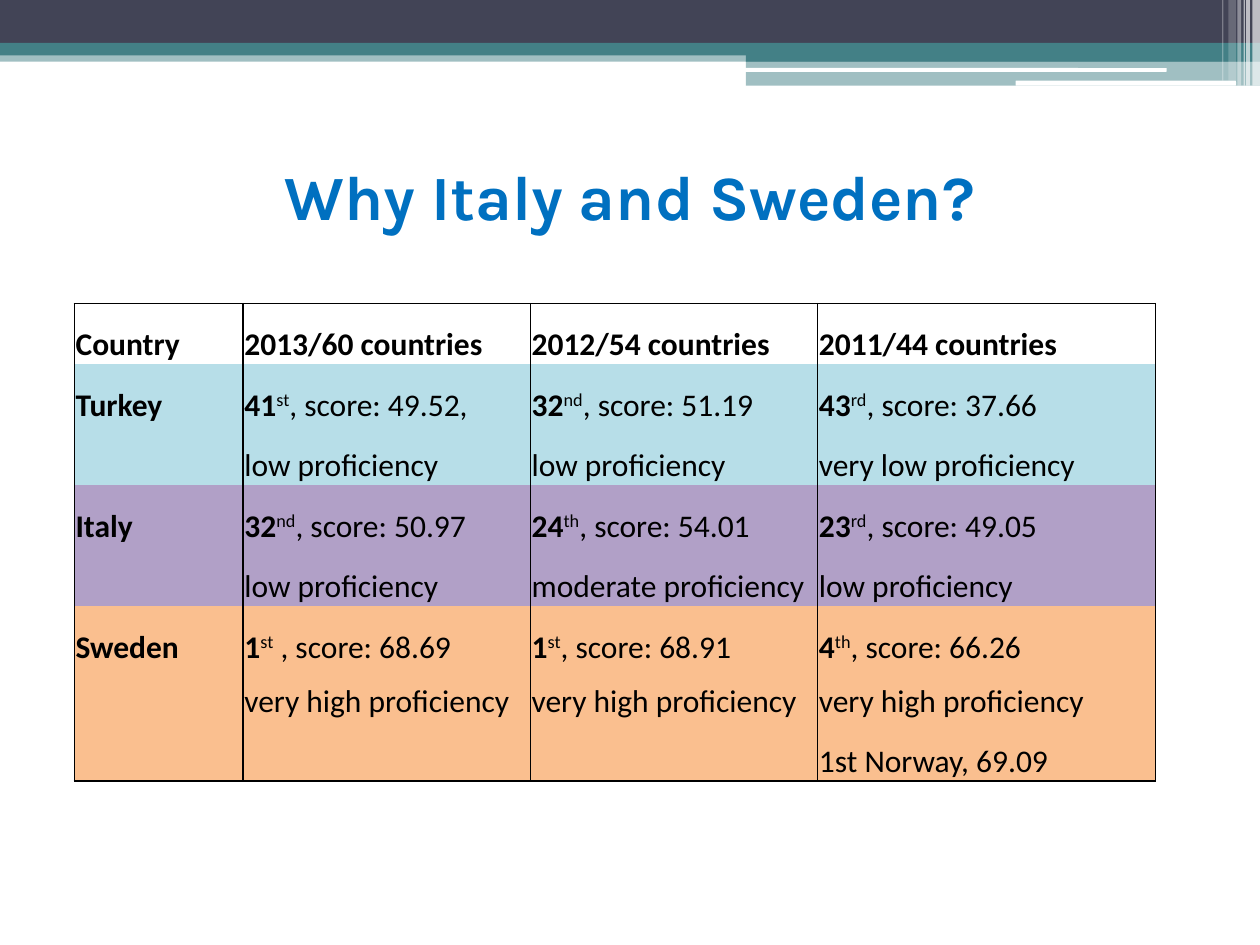
from dataclasses import dataclass
from typing import Optional

from lxml import etree
from pptx import Presentation
from pptx import util as u
from pptx.dml.color import RGBColor
from pptx.enum import shapes, text
from pptx.oxml import ns

COLORS = {
    "navy": "424456", "teal": "438086", "white": "FFFFFF", "black": "000000",
    "title": "0070C0", "turkey": "B7DEE8", "italy": "B1A0C7", "sweden": "FABF8F",
}
COLUMNS, ROWS = 100, 75  # slide grid of 0.1 inch cells
CELL = u.Inches(0.1)
TABLE_COLUMNS = (13.4, 22.8, 22.8, 26.8)
TABLE_ROWS = (4.8,) * 6 + (4.3, 4.8)
PLAIN_TABLE = "{2D5ABB26-0587-4C30-8999-92F81FD0307C}"


@dataclass
class Band:
    left: float
    top: float
    width: float
    height: float
    color: str
    opacity: int = 100
    rounded: bool = False


@dataclass
class Ranking:
    place: str
    suffix: str
    score: str
    level: str
    remark: str = ""


@dataclass
class Country:
    name: str
    color: str
    rankings: tuple[Ranking, ...]
    height: int = 2  # table rows taken


BANDS = [
    Band(0, 4, 100, 0.9, "teal", 50),
    Band(0, 0, 100, 3.4, "navy"),
    Band(0, 3.4, 100, 1, "teal"),
    Band(59.2, 3.9, 40.8, 1, "teal"),
    Band(59.2, 4.8, 40.8, 2, "teal", 50),
    Band(59.1, 5.4, 33.5, 0.3, "white", rounded=True),
    Band(80.6, 6.4, 17.5, 0.4, "white", rounded=True),
    # Fine stripes at the right edge
    Band(99.4, 0, 0.6, 6.8, "white", 65),
    Band(98.9, 0, 0.3, 6.8, "white", 65),
    Band(98.7, 0, 0.1, 6.8, "white", 60),
    Band(98.2, 0, 0.3, 6.8, "white", 40),
    Band(97.5, 0, 0.6, 6.4, "white", 20),
    Band(97, 0, 0.1, 6.4, "white", 30),
]
HEADINGS = ("Country", "2013/60 countries", "2012/54 countries", "2011/44 countries")
COUNTRIES = [
    Country("Turkey", "turkey", (
        Ranking("41", "st", ", score: 49.52,", "low proficiency"),
        Ranking("32", "nd", ", score: 51.19", "low proficiency"),
        Ranking("43", "rd", ", score: 37.66", "very low proficiency"))),
    Country("Italy", "italy", (
        Ranking("32", "nd", ", score: 50.97", "low proficiency"),
        Ranking("24", "th", ", score: 54.01", "moderate proficiency"),
        Ranking("23", "rd", ", score: 49.05", "low proficiency"))),
    Country("Sweden", "sweden", (
        Ranking("1", "st", " , score: 68.69", "very high proficiency"),
        Ranking("1", "st", ", score: 68.91", "very high proficiency"),
        Ranking("4", "th", ", score: 66.26", "very high proficiency",
                "1st Norway, 69.09")), height=3),
]


def grid(cells: float) -> int:
    return round(cells * CELL)


def color(name: str) -> RGBColor:
    return RGBColor.from_string(COLORS[name])


def add_text(para, words: str, *, size: float = 18, font: str = "Calibri",
             ink: str = "black", bold: bool = False, raised: bool = False) -> None:
    span = para.add_run()
    span.text = words
    span.font.size, span.font.name, span.font.bold = u.Pt(size), font, bold
    span.font.color.rgb = color(ink)
    if raised:
        span.font._element.set("baseline", "30000")


def add_band(page, band: Band) -> None:
    kind = shapes.MSO_SHAPE.ROUNDED_RECTANGLE if band.rounded else shapes.MSO_SHAPE.RECTANGLE
    shape = page.shapes.add_shape(
        kind, *map(grid, (band.left, band.top, band.width, band.height)))
    shape.shadow.inherit = False
    shape.line.fill.background()
    shape.fill.solid()
    shape.fill.fore_color.rgb = color(band.color)
    if band.opacity < 100:
        tint = shape._element.spPr.find(".//" + ns.qn("a:srgbClr"))
        etree.SubElement(tint, ns.qn("a:alpha"), val=str(band.opacity * 1000))


def add_title(page, words: str) -> None:
    box = page.shapes.add_textbox(*map(grid, (5, 12.5, 90, 11.7)))
    frame = box.text_frame
    frame.word_wrap = True
    frame.margin_top = 0
    frame.vertical_anchor = text.MSO_ANCHOR.TOP
    para = frame.paragraphs[0]
    para.alignment = text.PP_ALIGN.CENTER
    add_text(para, words, size=36, font="Karla", ink="title", bold=True)


def add_border(cell, side: str) -> None:
    line = etree.SubElement(cell._tc.get_or_add_tcPr(), ns.qn(f"a:ln{side}"),
                            w=str(u.Pt(1)))
    fill = etree.SubElement(line, ns.qn("a:solidFill"))
    etree.SubElement(fill, ns.qn("a:srgbClr"), val=COLORS["black"])


def format_cell(cell, sides: str, fill: Optional[str]) -> None:
    cell.margin_left = cell.margin_right = cell.margin_top = u.Inches(0.01)
    cell.margin_bottom = 0
    cell.vertical_anchor = text.MSO_ANCHOR.BOTTOM
    for side in sides:  # borders come before the fill
        add_border(cell, side)
    if fill:
        cell.fill.solid()
        cell.fill.fore_color.rgb = color(fill)
    else:
        cell.fill.background()


def fill_country(table, top: int, country: Country) -> None:
    def para_at(row: int, column: int):
        return table.cell(top + row, column).text_frame.paragraphs[0]

    add_text(para_at(0, 0), country.name, bold=True)
    for column, ranking in enumerate(country.rankings, start=1):
        first = para_at(0, column)
        add_text(first, ranking.place, bold=True)
        add_text(first, ranking.suffix, raised=True)
        add_text(first, ranking.score)
        add_text(para_at(1, column), ranking.level)
        if ranking.remark:
            add_text(para_at(2, column), ranking.remark)


def add_ranking_table(page) -> None:
    frame = page.shapes.add_table(
        len(TABLE_ROWS), len(TABLE_COLUMNS), grid(5.9), grid(24.1),
        grid(sum(TABLE_COLUMNS)), grid(sum(TABLE_ROWS)))
    table = frame.table
    table.first_row = table.horz_banding = False
    table._tbl.tblPr.find(ns.qn("a:tableStyleId")).text = PLAIN_TABLE
    for column, width in zip(table.columns, TABLE_COLUMNS):
        column.width = grid(width)
    for row, height in zip(table.rows, TABLE_ROWS):
        row.height = grid(height)

    # Row fills and borders: all verticals, outer edge at top and bottom
    fills = [None] + [c.color for c in COUNTRIES for _ in range(c.height)]
    for index, (row, fill) in enumerate(zip(table.rows, fills)):
        sides = "LR" + {0: "T", len(fills) - 1: "B"}.get(index, "")
        for cell in row.cells:
            format_cell(cell, sides, fill)

    # Wording
    for column, heading in enumerate(HEADINGS):
        add_text(table.cell(0, column).text_frame.paragraphs[0], heading, bold=True)
    top = 1
    for country in COUNTRIES:
        fill_country(table, top, country)
        top += country.height


def main() -> None:
    deck = Presentation()
    deck.slide_width, deck.slide_height = grid(COLUMNS), grid(ROWS)
    page = deck.slides.add_slide(deck.slide_layouts[6])
    for band in BANDS:
        add_band(page, band)
    add_title(page, "Why Italy and Sweden?")
    add_ranking_table(page)
    deck.save("out.pptx")


if __name__ == "__main__":
    main()
